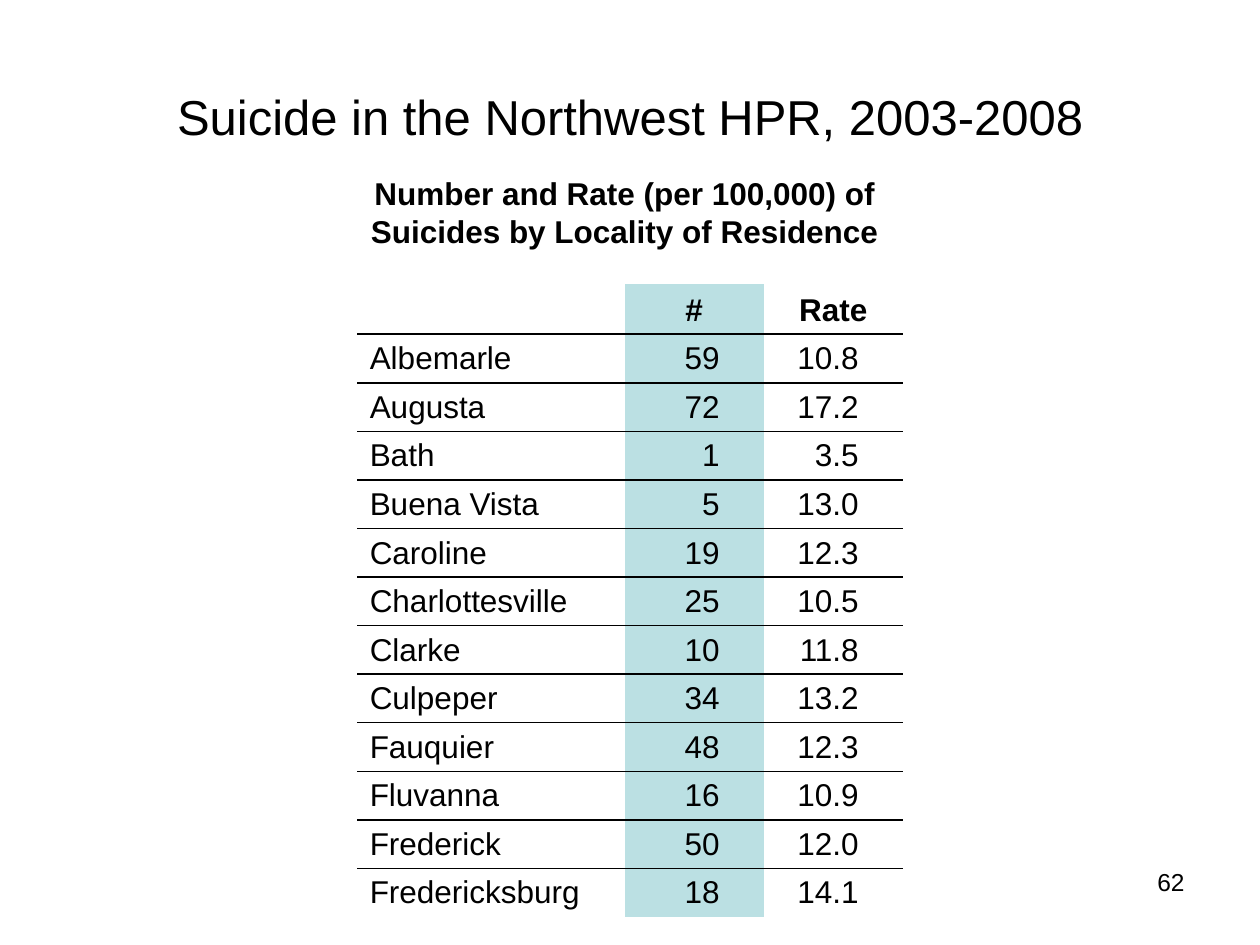
from dataclasses import dataclass

from lxml.etree import SubElement
from pptx import Presentation
from pptx.dml.color import RGBColor
from pptx.enum.text import MSO_ANCHOR as Anchor, PP_ALIGN as Align
from pptx.oxml.ns import qn
from pptx.util import Cm, Pt


@dataclass(frozen=True)
class Theme:
    font: str = "Arial"
    ink: RGBColor = RGBColor(0, 0, 0)
    highlight: RGBColor = RGBColor(0xBB, 0xE0, 0xE3)
    title: int = 28
    body: int = 18
    footer: int = 14
    rule: int = 1


THEME = Theme()
HEADINGS = ("", "#", "Rate")
LOCALITIES = [
    ("Albemarle", "59", "10.8"),
    ("Augusta", "72", "17.2"),
    ("Bath", "1", "3.5"),
    ("Buena Vista", "5", "13.0"),
    ("Caroline", "19", "12.3"),
    ("Charlottesville", "25", "10.5"),
    ("Clarke", "10", "11.8"),
    ("Culpeper", "34", "13.2"),
    ("Fauquier", "48", "12.3"),
    ("Fluvanna", "16", "10.9"),
    ("Frederick", "50", "12.0"),
    ("Fredericksburg", "18", "14.1"),
]


def style_paragraph(paragraph, size, align, bold=False):
    paragraph.alignment = align
    for font in [paragraph.font] + [run.font for run in paragraph.runs]:
        font.name = THEME.font
        font.size = Pt(size)
        font.bold = bold
        font.color.rgb = THEME.ink


def add_text(slide, box, text, size, align, anchor=Anchor.TOP, bold=False):
    frame = slide.shapes.add_textbox(*map(Cm, box)).text_frame
    frame.word_wrap = True
    frame.vertical_anchor = anchor
    frame.text = text
    for paragraph in frame.paragraphs:
        style_paragraph(paragraph, size, align, bold)


def set_borders(cell, ruled_sides):
    properties = cell._tc.get_or_add_tcPr()
    for side in "LRTB":
        line = SubElement(properties, qn(f"a:ln{side}"), w=str(Pt(THEME.rule)))
        if side in ruled_sides:
            fill = SubElement(line, qn("a:solidFill"))
            SubElement(fill, qn("a:srgbClr"), val=str(THEME.ink))
        else:
            SubElement(line, qn("a:noFill"))


def fill_cell(cell, text, is_heading, is_number, is_highlighted):
    if is_highlighted:
        cell.fill.solid()
        cell.fill.fore_color.rgb = THEME.highlight
    else:
        cell.fill.background()
    cell.vertical_anchor = Anchor.BOTTOM
    align = Align.LEFT
    if is_heading:
        align = Align.CENTER
    elif is_number:
        align = Align.RIGHT
        cell.margin_right = Cm(0.89)
    cell.text_frame.text = text
    paragraph = cell.text_frame.paragraphs[0]
    paragraph.line_spacing = 0.95
    style_paragraph(paragraph, THEME.body, align, is_heading)


def add_rate_table(slide, box):
    rows = [HEADINGS, *LOCALITIES]
    table = slide.shapes.add_table(len(rows), len(HEADINGS), *map(Cm, box)).table
    table.first_row = table.horz_banding = False
    for column, share in zip(table.columns, (0.49, 0.255, 0.255)):
        column.width = Cm(box[2] * share)
    for r, values in enumerate(rows):
        table.rows[r].height = Cm(box[3] / len(rows))
        ruled_sides = ("T" if r > 0 else "") + ("B" if r < len(rows) - 1 else "")
        for c, value in enumerate(values):
            cell = table.cell(r, c)
            set_borders(cell, ruled_sides)
            fill_cell(cell, value, r == 0, c > 0, c == 1)


def add_header(slide, box):
    left, top, width, height = box
    add_text(slide, (left, top, width, 3.17), "Suicide in the Northwest HPR, 2003-2008",
             THEME.title, Align.CENTER, Anchor.MIDDLE)
    add_text(slide, (left + 3.07, top + height - 1.9, width - 6.35, 1.9),
             "Number and Rate (per 100,000) of\nSuicides by Locality of Residence",
             THEME.body, Align.CENTER, bold=True)


def add_page_number(slide, box):
    add_text(slide, box, "62", THEME.footer, Align.RIGHT)


def main():
    deck = Presentation()
    deck.slide_width, deck.slide_height = Cm(25.4), Cm(19.05)
    slide = deck.slides.add_slide(deck.slide_layouts[6])
    add_page_number(slide, (18.21, 17.35, 5.92, 1.32))
    add_header(slide, (1.27, 0.76, 22.86, 4.52))
    add_rate_table(slide, (7.2, 5.72, 11, 12.12))
    deck.save("out.pptx")


if __name__ == "__main__":
    main()
